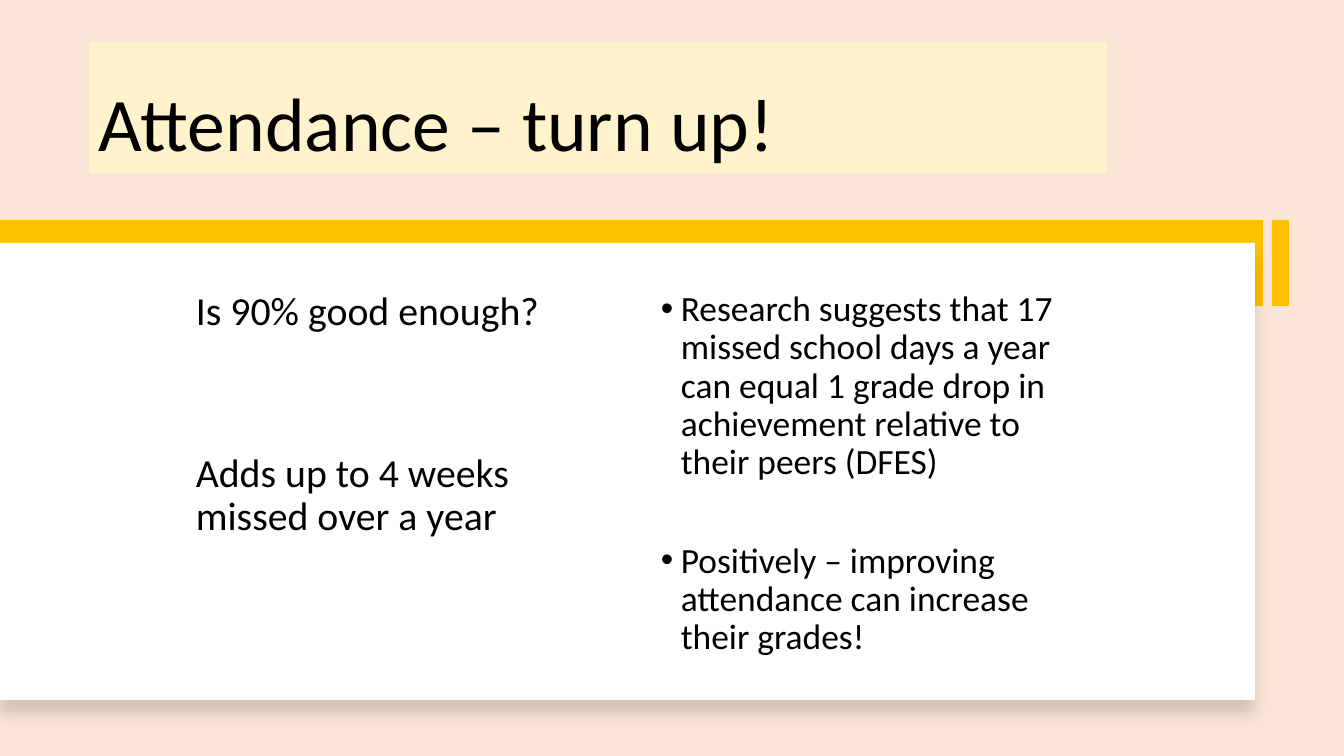
from lxml import etree
from pptx import Presentation
from pptx.dml.color import RGBColor
from pptx.enum.shapes import MSO_SHAPE
from pptx.enum.text import MSO_ANCHOR
from pptx.oxml.ns import qn
from pptx.util import Pt

EMU_PER_PX = 914400 / 100.8
RECTANGLE = MSO_SHAPE.RECTANGLE
TOP, BOTTOM = MSO_ANCHOR.TOP, MSO_ANCHOR.BOTTOM
FONT = "Calibri"
BULLET_INDENT = 20
COLORS = {
    "background": "FBE5D6",
    "title": "FFF2CC",
    "accent": "FFC000",
    "panel": "FFFFFF",
    "text": "000000",
}


def emu(px):
    return round(px * EMU_PER_PX)


def color(name):
    return RGBColor.from_string(COLORS[name])


def set_format(target, values):
    for name, value in values.items():
        setattr(target, name, value)


def add_block(page, fill, *bounds):
    block = page.shapes.add_shape(RECTANGLE, *map(emu, bounds))
    block.fill.solid()
    block.fill.fore_color.rgb = color(fill)
    block.line.fill.background()
    block.shadow.inherit = False
    return block


def add_soft_shadow(block):
    effects = block._element.spPr.find(qn("a:effectLst"))
    shadow = etree.SubElement(
        effects, qn("a:outerShdw"), blurRad=str(Pt(11)), dist=str(Pt(10)),
        dir="5400000", algn="t", rotWithShape="0")
    tint = etree.SubElement(shadow, qn("a:srgbClr"), val=COLORS["text"])
    etree.SubElement(tint, qn("a:alpha"), val="15000")


def add_bullet(para):
    properties = para._p.get_or_add_pPr()
    properties.set("marL", str(emu(BULLET_INDENT)))
    properties.set("indent", str(-emu(BULLET_INDENT)))
    etree.SubElement(properties, qn("a:buFont"), typeface="Arial")
    etree.SubElement(properties, qn("a:buChar"), char="•")


def add_text(page, bounds, paragraphs, size, gap=0, bulleted=False, anchor=TOP):
    box = page.shapes.add_textbox(*map(emu, bounds))
    frame = box.text_frame
    set_format(frame, {"word_wrap": True, "vertical_anchor": anchor})
    for index, text in enumerate(paragraphs):
        para = frame.add_paragraph() if index else frame.paragraphs[0]
        set_format(para, {"line_spacing": 0.9, "space_before": Pt(gap if index else 0)})
        if bulleted:
            add_bullet(para)
        span = para.add_run()
        span.text = text
        set_format(span.font, {"name": FONT, "size": Pt(size)})
        span.font.color.rgb = color("text")


def main():
    deck = Presentation()
    set_format(deck, {"slide_width": emu(1344), "slide_height": emu(756)})
    page = deck.slides.add_slide(deck.slide_layouts[6])
    page.background.fill.solid()
    page.background.fill.fore_color.rgb = color("background")

    title_bounds = (89, 42, 1018, 131)
    add_block(page, "title", *title_bounds)
    add_text(page, title_bounds, ["Attendance – turn up!"], 54, anchor=BOTTOM)

    add_block(page, "accent", 1272, 220, 17, 86)
    add_block(page, "accent", 0, 220, 1263, 86)
    add_soft_shadow(add_block(page, "panel", 0, 243, 1255, 457))

    add_text(page, (186, 286, 452, 379), [
        "Is 90% good enough?",
        "Adds up to 4 weeks missed over a year",
    ], 28.4, gap=85)
    add_text(page, (651, 286, 452, 379), [
        "Research suggests that 17 missed school days a year can equal "
        "1 grade drop in achievement relative to their peers (DFES)",
        "Positively – improving attendance can increase their grades!",
    ], 25.3, gap=43, bulleted=True)
    deck.save("out.pptx")


if __name__ == "__main__":
    main()
